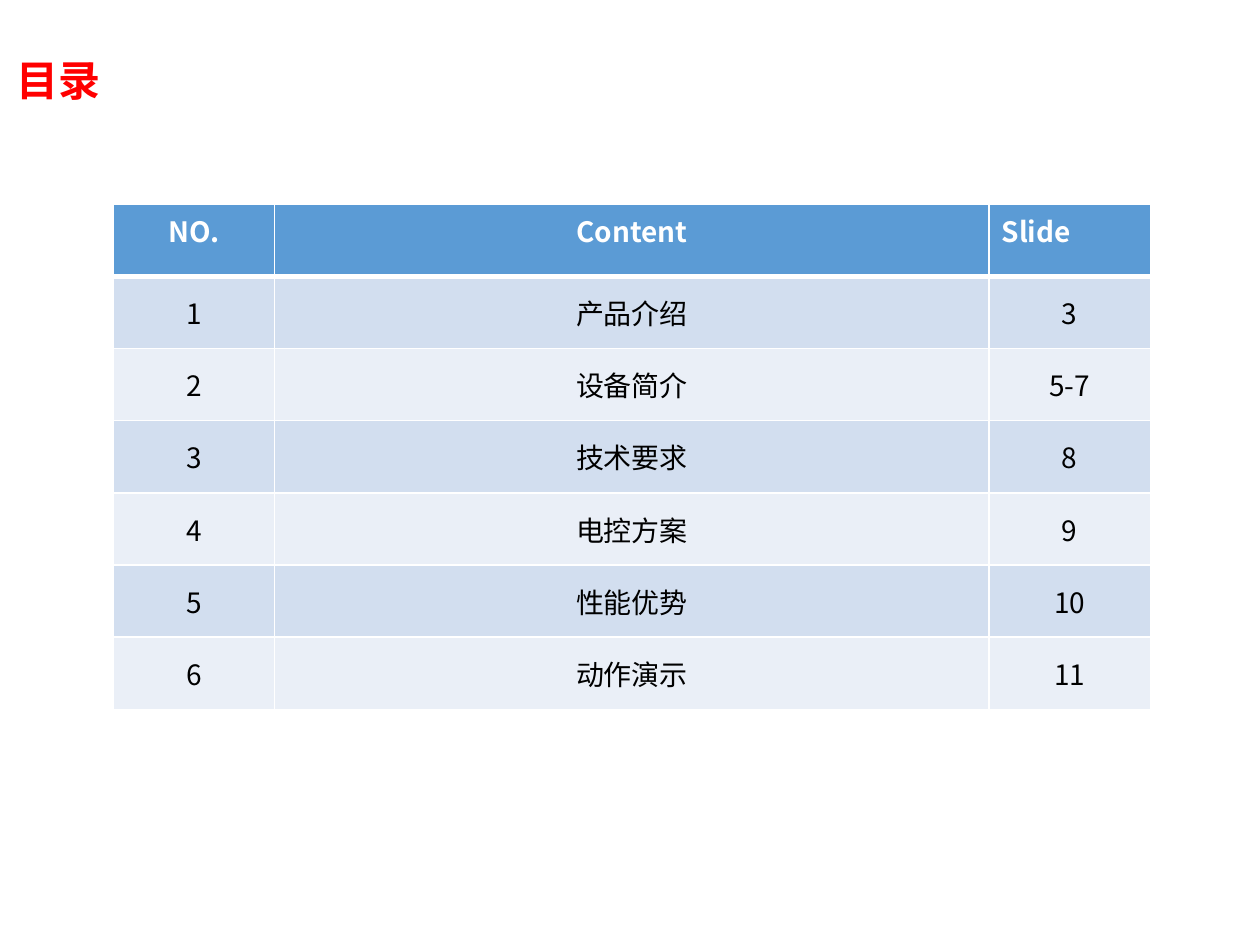
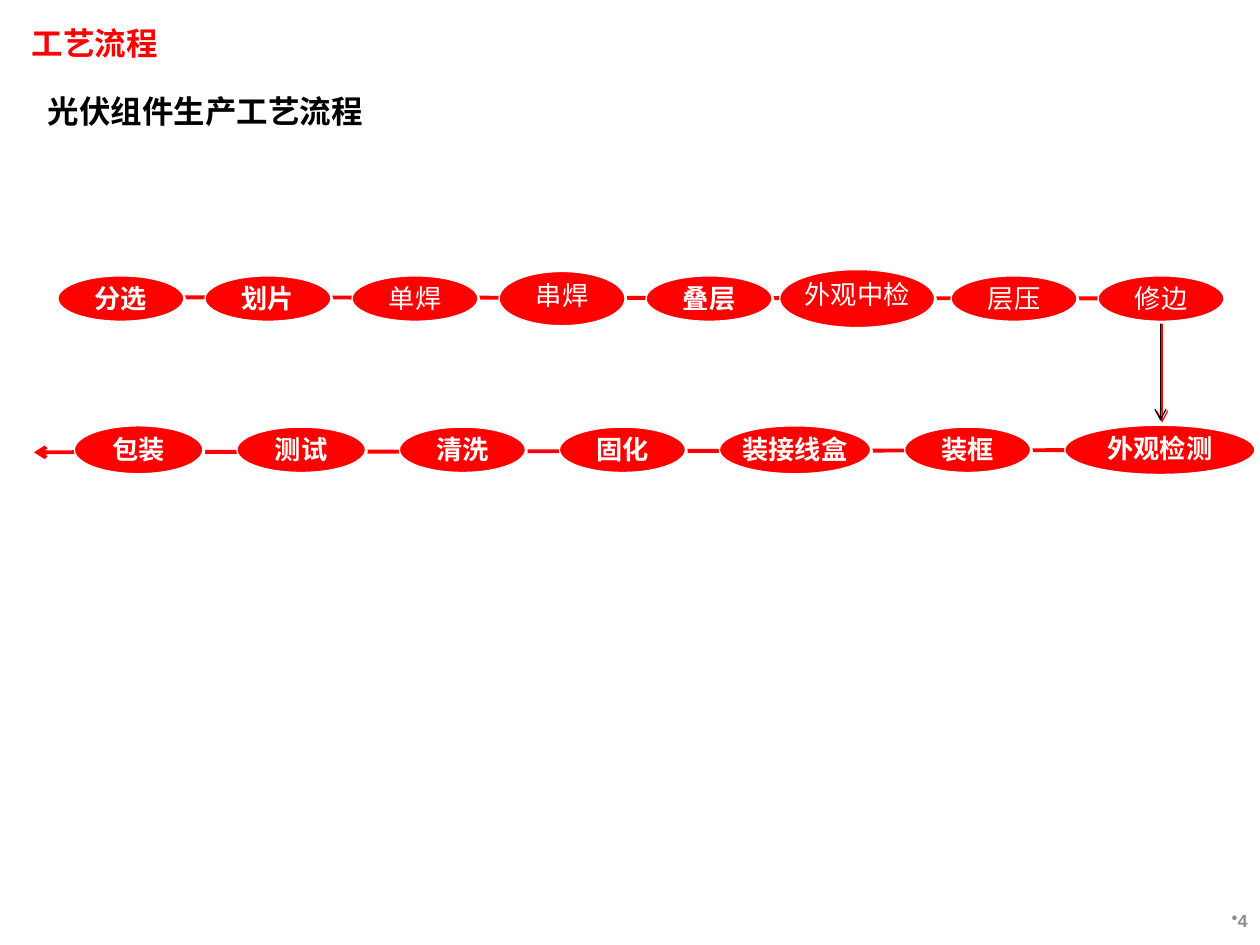
"""Build the contents page and the process flow page of a photovoltaic module deck."""
from lxml import etree
from pptx import Presentation
from pptx import util as u
from pptx.dml import color
from pptx.enum import shapes, text
from pptx.oxml import ns

COLUMNS, ROWS = 100, 75
CJK = "Noto Sans CJK SC"
RED, WHITE, BLACK, GREY = "FF0000", "FFFFFF", "000000", "8C8C8C"
HEADER, BANDS = "5B9BD5", ("D2DEEF", "EAEFF7")
LEFT, CENTER, RIGHT = text.PP_ALIGN.LEFT, text.PP_ALIGN.CENTER, text.PP_ALIGN.RIGHT
TOP, MIDDLE = text.MSO_ANCHOR.TOP, text.MSO_ANCHOR.MIDDLE

CONTENTS = [
    ("NO.", "Content", "Slide"),
    ("1", "产品介绍", "3"),
    ("2", "设备简介", "5-7"),
    ("3", "技术要求", "8"),
    ("4", "电控方案", "9"),
    ("5", "性能优势", "10"),
    ("6", "动作演示", "11"),
]
STEP = dict(width=10, height=3.6, bold=True)
UPPER_STEPS = [
    ("分选", {}),
    ("划片", {}),
    ("单焊", dict(bold=False)),
    ("串焊", dict(bold=False, height=4.3)),
    ("叠层", {}),
    ("外观中检", dict(bold=False, width=12.3, height=4.6, gap=0.6)),
    ("层压", dict(bold=False, gap=1.3)),
    ("修边", dict(bold=False)),
]
LOWER_STEPS = [
    ("包装", dict(width=10.2, height=3.8)),
    ("测试", dict(width=10.2)),
    ("清洗", {}),
    ("固化", {}),
    ("装接线盒", dict(width=12, height=3.8)),
    ("装框", {}),
    ("外观检测", dict(width=15.1, height=3.9)),
]


def rgb(value):
    return color.RGBColor.from_string(value)


def add_node(parent, tag, **attributes):
    return etree.SubElement(parent, ns.qn(tag), attributes)


def write(frame, words, size=15, hue=BLACK, bold=True, font=CJK, align=LEFT, bullet=None):
    para = frame.paragraphs[0]
    para.alignment = align
    if bullet:
        properties = para._p.get_or_add_pPr()
        properties.set("marL", "0")
        properties.set("indent", "0")
        add_node(properties, "a:buChar", char=bullet)
    span = para.add_run()
    span.text = words
    span.font.size, span.font.bold, span.font.name = u.Pt(size), bold, font
    span.font.color.rgb = rgb(hue)
    add_node(span._r.get_or_add_rPr(), "a:ea", typeface=CJK)


def add_effects(item, shadow=None):
    effects = add_node(item._element.spPr, "a:effectLst")
    if shadow:
        cast = add_node(effects, "a:outerShdw", blurRad="0", dist=str(u.Pt(1.4)),
                        dir="2700000", algn="ctr", rotWithShape="0")
        add_node(cast, "a:srgbClr", val=shadow)


class Painter:
    def __init__(self, deck):
        self.deck = deck
        self.page = None

    def across(self, columns):
        return round(self.deck.slide_width * columns / COLUMNS)

    def down(self, rows):
        return round(self.deck.slide_height * rows / ROWS)

    def area(self, left, top, width, height):
        return self.across(left), self.down(top), self.across(width), self.down(height)

    def set_frame(self, frame, side, edge, anchor=TOP):
        frame.margin_left = frame.margin_right = self.across(side)
        frame.margin_top = frame.margin_bottom = self.down(edge)
        frame.vertical_anchor = anchor
        frame.word_wrap = True
        frame.auto_size = text.MSO_AUTO_SIZE.NONE

    def start_page(self, title, area, **style):
        self.page = self.deck.slides.add_slide(self.deck.slide_layouts[5])
        box = self.page.shapes.title
        box.left, box.top, box.width, box.height = self.area(*area)
        self.set_frame(box.text_frame, 1.3, 0.7)
        write(box.text_frame, title, hue=RED, **style)

    def label(self, words, area, anchor=TOP, **style):
        box = self.page.shapes.add_textbox(*self.area(*area))
        self.set_frame(box.text_frame, 1, 0.5, anchor)
        write(box.text_frame, words, **style)

    def table(self, content, area, widths):
        grid = self.page.shapes.add_table(len(content), len(widths), *self.area(*area)).table
        for column, width in zip(grid.columns, widths):
            column.width = self.across(width)
        for row, words in enumerate(content):
            for column, value in enumerate(words):
                self.cell(grid.cell(row, column), value, row, column)

    def cell(self, cell, value, row, column):
        header = row == 0
        cell.vertical_anchor = TOP if header else MIDDLE
        cell.fill.solid()
        cell.fill.fore_color.rgb = rgb(HEADER if header else BANDS[(row - 1) % 2])
        write(cell.text_frame, value, size=16, bold=header, hue=WHITE if header else BLACK,
              align=LEFT if header and column == 2 else CENTER)
        properties = cell._tc.get_or_add_tcPr()
        weights = dict(L=1, R=1, T=3 if row == 1 else 1, B=3 if header else 1)
        for place, (side, weight) in enumerate(weights.items()):
            border = add_node(properties, f"a:ln{side}", w=str(u.Pt(weight)))
            add_node(add_node(border, "a:solidFill"), "a:srgbClr", val=WHITE)
            properties.insert(place, border)

    def arrow(self, start, end, hue=RED, weight=2.25, shadow=None):
        line = self.page.shapes.add_connector(
            shapes.MSO_CONNECTOR.STRAIGHT, self.across(start[0]), self.down(start[1]),
            self.across(end[0]), self.down(end[1]))
        line.line.color.rgb = rgb(hue)
        line.line.width = u.Pt(weight)
        add_node(line.line._get_or_add_ln(), "a:tailEnd", type="arrow")
        add_effects(line, shadow)

    def step(self, words, area, bold):
        oval = self.page.shapes.add_shape(shapes.MSO_SHAPE.OVAL, *self.area(*area))
        oval.fill.solid()
        oval.fill.fore_color.rgb = rgb(RED)
        oval.line.color.rgb = rgb(WHITE)
        oval.line.width = u.Pt(0.75)
        add_effects(oval, WHITE)
        self.set_frame(oval.text_frame, 0, 0)
        write(oval.text_frame, words, hue=WHITE, bold=bold, align=CENTER)

    def step_row(self, steps, left, middle, gap):
        for place, (words, changes) in enumerate(steps):
            step = {**STEP, "gap": gap, **changes}
            left += step["gap"] if place else 0
            area = left, middle - step["height"] / 2, step["width"], step["height"]
            self.step(words, area, step["bold"])
            left += step["width"]


def main():
    deck = Presentation()
    deck.slide_width, deck.slide_height = u.Inches(10), u.Inches(7.5)
    painter = Painter(deck)

    painter.start_page("目录", (0, 3.6, 100, 5.4), size=24, font="Arial")
    painter.table(CONTENTS, (9, 16.2, 82.3, 40.1), (12.8, 56.7, 12.8))

    painter.start_page("工艺流程", (1.2, 1.2, 92.1, 4.3), size=18)
    painter.label("光伏组件生产工艺流程", (2.8, 6.8, 51.7, 4), size=18)
    painter.label("4", (76.7, 71.7, 23.3, 2.7), anchor=MIDDLE, size=10, hue=GREY,
                  font="Arial", align=RIGHT, bullet="•")
    painter.arrow((99.6, 35.7), (2.7, 35.9))
    painter.arrow((92.1, 24.8), (92.1, 33.4), hue=BLACK, weight=0.75, shadow=RED)
    painter.arrow((14.6, 23.6), (97.1, 23.7))
    painter.step_row(UPPER_STEPS, left=4.6, middle=23.7, gap=1.67)
    painter.step_row(LOWER_STEPS, left=5.9, middle=35.7, gap=2.7)

    deck.save("out.pptx")


if __name__ == "__main__":
    main()
